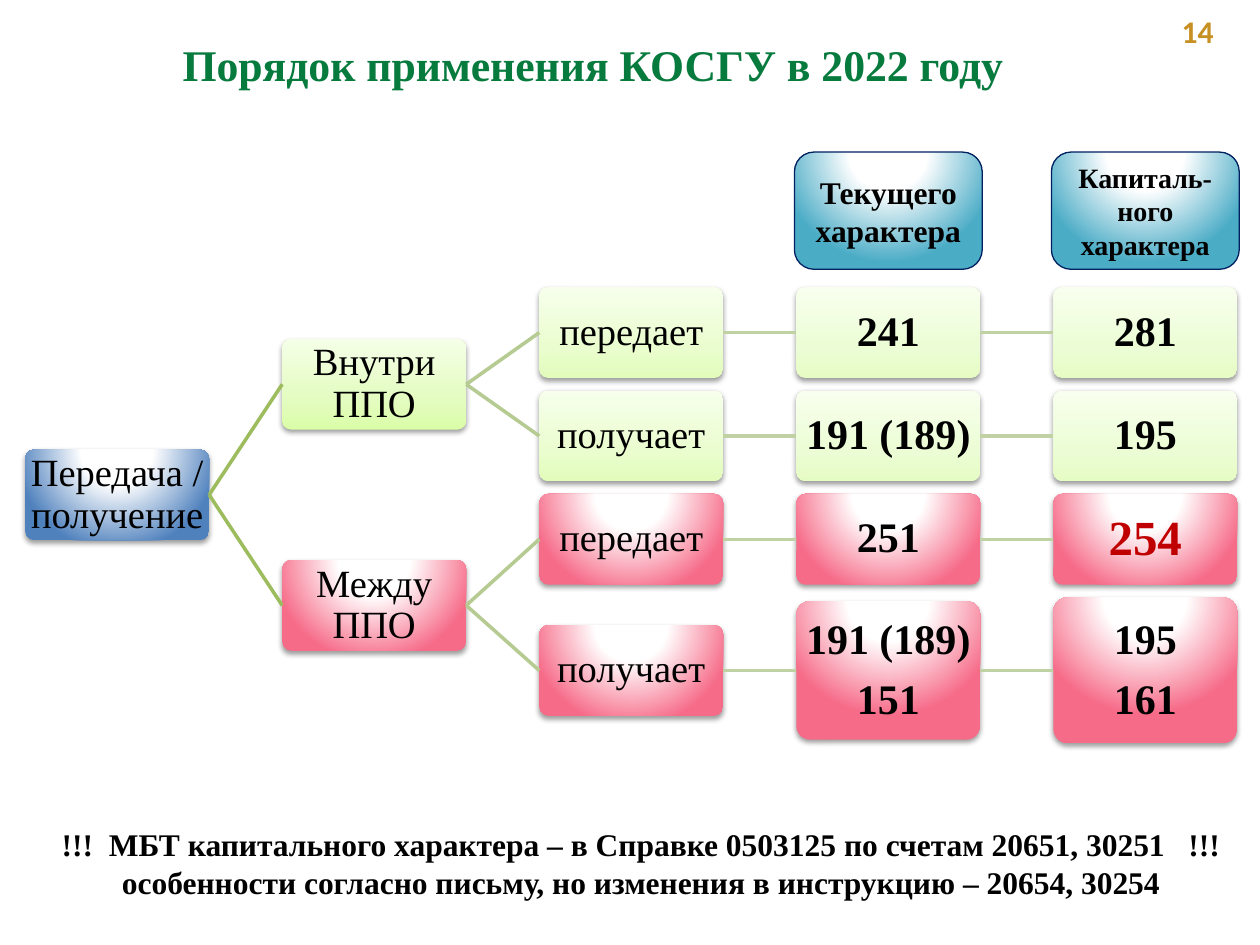
from dataclasses import dataclass
from typing import Optional

from lxml import etree
from pptx import Presentation
from pptx.dml.color import RGBColor
from pptx.enum.shapes import MSO_CONNECTOR, MSO_SHAPE
from pptx.enum.text import MSO_ANCHOR, MSO_AUTO_SIZE, PP_ALIGN
from pptx.oxml import parse_xml
from pptx.util import Inches, Pt

ROUND = MSO_SHAPE.ROUNDED_RECTANGLE
LINE = MSO_CONNECTOR.STRAIGHT
MIDDLE, TOP = MSO_ANCHOR.MIDDLE, MSO_ANCHOR.TOP
CENTER, LEFT = PP_ALIGN.CENTER, PP_ALIGN.LEFT
GROW = MSO_AUTO_SIZE.SHAPE_TO_FIT_TEXT
FIXED = MSO_AUTO_SIZE.NONE
A = "http://schemas.openxmlformats.org/drawingml/2006/main"
SERIF = "Times New Roman"

COLORS = {
    "title": "077A3E", "number": "C79023", "text": "000000", "alert": "C00000",
    "edge": "002060", "shadow": "000000",
}
# Gradient stops at 0, 35 and 100 percent
FILLS = {
    "blue": ("FFFFFF", "FFFFFF", "4F81BD"),
    "pink": ("FFFFFF", "FFFFFF", "F66B88"),
    "teal": ("FFFFFF", "FFFFFF", "4BACC6"),
    "green1": ("DAFDA8", "E4FCC2", "F5FFE7"),
    "green2": ("E2FCBC", "EAFDCF", "F7FFEC"),
    "green3": ("E6FCC5", "ECFDD6", "F8FFEE"),
}
# Line colour by the column that the line leads to
LINKS = {1: "9CBC5D", 2: "B5CB91", 3: "C0D2A4", 4: "C0D2A4"}

# Grid of the tree, in inches: columns by left edge, rows by centre
COL0, COL_STEP, BOX_W, BOX_H = 0.2, 2.04, 1.46, 0.72
ROW0, ROW_STEP = 2.64, 0.82
LAST = 3.27
MID_TOP, MID_LOW = 0.5, 2.64


@dataclass
class Node:
    text: str
    col: int
    row: float
    fill: str
    root: Optional[int] = None
    size: int = 24
    color: str = "text"
    high: float = BOX_H


@dataclass
class Head:
    text: str
    col: int
    size: int


NODES = [
    Node("Передача / получение", 0, (MID_TOP + MID_LOW) / 2, "blue", size=22),
    Node("Внутри ППО", 1, MID_TOP, "green1", 0, 22),
    Node("Между ППО", 1, MID_LOW, "pink", 0, 22),
    Node("передает", 2, 0, "green2", 1, 22),
    Node("получает", 2, 1, "green2", 1, 22),
    Node("передает", 2, 2, "pink", 2, 22),
    Node("получает", 2, LAST, "pink", 2, 22),
    Node("241", 3, 0, "green3", 3),
    Node("191 (189)", 3, 1, "green3", 4),
    Node("251", 3, 2, "pink", 5),
    Node("191 (189)\n151", 3, LAST, "pink", 6, high=1.1),
    Node("281", 4, 0, "green3", 7),
    Node("195", 4, 1, "green3", 8),
    Node("254", 4, 2, "pink", 9, 28, "alert"),
    Node("195\n161", 4, LAST, "pink", 10, high=1.16),
]
HEADS = [Head("Текущего характера", 3, 18), Head("Капиталь-ного характера", 4, 16)]


def write(shape, text: str, size: int, color: str, bold: bool = True,
          font: str = SERIF, align=CENTER, anchor=MIDDLE, fit=FIXED) -> None:
    frame = shape.text_frame
    frame.text = text
    frame.word_wrap = True
    frame.auto_size = fit
    frame.vertical_anchor = anchor
    for para in frame.paragraphs:
        para.alignment = align
        for run in para.runs:
            run.font.name = font
            run.font.size = Pt(size)
            run.font.bold = bold
            run.font.color.rgb = RGBColor.from_string(COLORS[color])


def shade(shape, name: str) -> None:
    """Fill with a gradient: upward for the greens, radial for the rest."""
    stops = "".join(
        f'<a:gs pos="{pos}"><a:srgbClr val="{rgb}"/></a:gs>'
        for pos, rgb in zip((0, 35000, 100000), FILLS[name]))
    if name.startswith("green"):
        way = '<a:lin ang="16200000" scaled="1"/>'
    else:
        way = ('<a:path path="circle"><a:fillToRect l="50000" t="-80000" '
               'r="50000" b="180000"/></a:path>')
    grad = parse_xml(f'<a:gradFill xmlns:a="{A}" rotWithShape="1">'
                     f'<a:gsLst>{stops}</a:gsLst>{way}</a:gradFill>')
    shape._element.spPr.find(f"{{{A}}}prstGeom").addnext(grad)


def cast(shape) -> None:
    """Give the box a soft shadow straight below it."""
    effects = shape._element.spPr.find(f"{{{A}}}effectLst")
    effects.append(parse_xml(
        f'<a:outerShdw xmlns:a="{A}" blurRad="40000" dist="20000" dir="5400000" '
        f'rotWithShape="0"><a:srgbClr val="{COLORS["shadow"]}">'
        '<a:alpha val="38000"/></a:srgbClr></a:outerShdw>'))


def add_box(slide, col: int, row: float, wide: float, high: float, fill: str):
    left = COL0 + col * COL_STEP + (BOX_W - wide) / 2
    top = ROW0 + row * ROW_STEP - high / 2
    box = slide.shapes.add_shape(
        ROUND, Inches(left), Inches(top), Inches(wide), Inches(high))
    box.shadow.inherit = False
    shade(box, fill)
    return box


def add_node(slide, node: Node):
    box = add_box(slide, node.col, node.row, BOX_W, node.high, node.fill)
    box.adjustments[0] = 0.1
    box.line.fill.background()
    cast(box)
    write(box, node.text, node.size, node.color, bold=node.col > 2)
    frame = box.text_frame
    frame.margin_left = frame.margin_right = Inches(0.02)
    frame.margin_top = frame.margin_bottom = Inches(0.02)
    for para in frame.paragraphs:
        para.line_spacing = 0.9
        para.space_after = Pt(0.35 * node.size)
    return box


def add_head(slide, head: Head) -> None:
    box = add_box(slide, head.col, -1.18, 1.49, 0.93, "teal")
    box.line.color.rgb = RGBColor.from_string(COLORS["edge"])
    box.line.width = Pt(0.75)
    write(box, head.text, head.size, "text")


def join(slide, start, end, rgb: str) -> None:
    link = slide.shapes.add_connector(LINE, 0, 0, 0, 0)
    link.begin_connect(start, 3)
    link.end_connect(end, 1)
    link.line.color.rgb = RGBColor.from_string(rgb)
    link.line.width = Pt(2)
    etree.SubElement(link._element.spPr, f"{{{A}}}effectLst")


def main() -> None:
    deck = Presentation()
    deck.slide_width, deck.slide_height = Inches(10), Inches(7.5)
    slide = deck.slides.add_slide(deck.slide_layouts[5])

    # Title and page number
    title = slide.shapes.title
    title.left, title.top = Inches(1.07), Inches(0.25)
    title.width, title.height = Inches(7.27), Inches(0.52)
    write(title, "Порядок применения КОСГУ в 2022 году", 25, "title",
          anchor=TOP, fit=GROW)
    page = slide.shapes.add_textbox(
        Inches(9.28), Inches(0.05), Inches(0.55), Inches(0.4))
    write(page, "14", 18, "number", font="Calibri", align=LEFT, anchor=TOP)

    # Tree of transfers
    boxes = [add_node(slide, node) for node in NODES]
    for node, box in zip(NODES, boxes):
        if node.root is not None:
            join(slide, boxes[node.root], box, LINKS[node.col])

    # Column heads
    for head in HEADS:
        add_head(slide, head)

    # Note at the foot
    note = slide.shapes.add_textbox(
        Inches(0.36), Inches(6.5), Inches(9.46), Inches(0.71))
    write(note, "!!!  МБТ капитального характера – в Справке 0503125 "
          "по счетам 20651, 30251   !!!\n"
          "особенности согласно письму, но изменения в инструкцию – 20654, 30254",
          18, "text", anchor=TOP, fit=GROW)

    deck.save("out.pptx")


if __name__ == "__main__":
    main()
